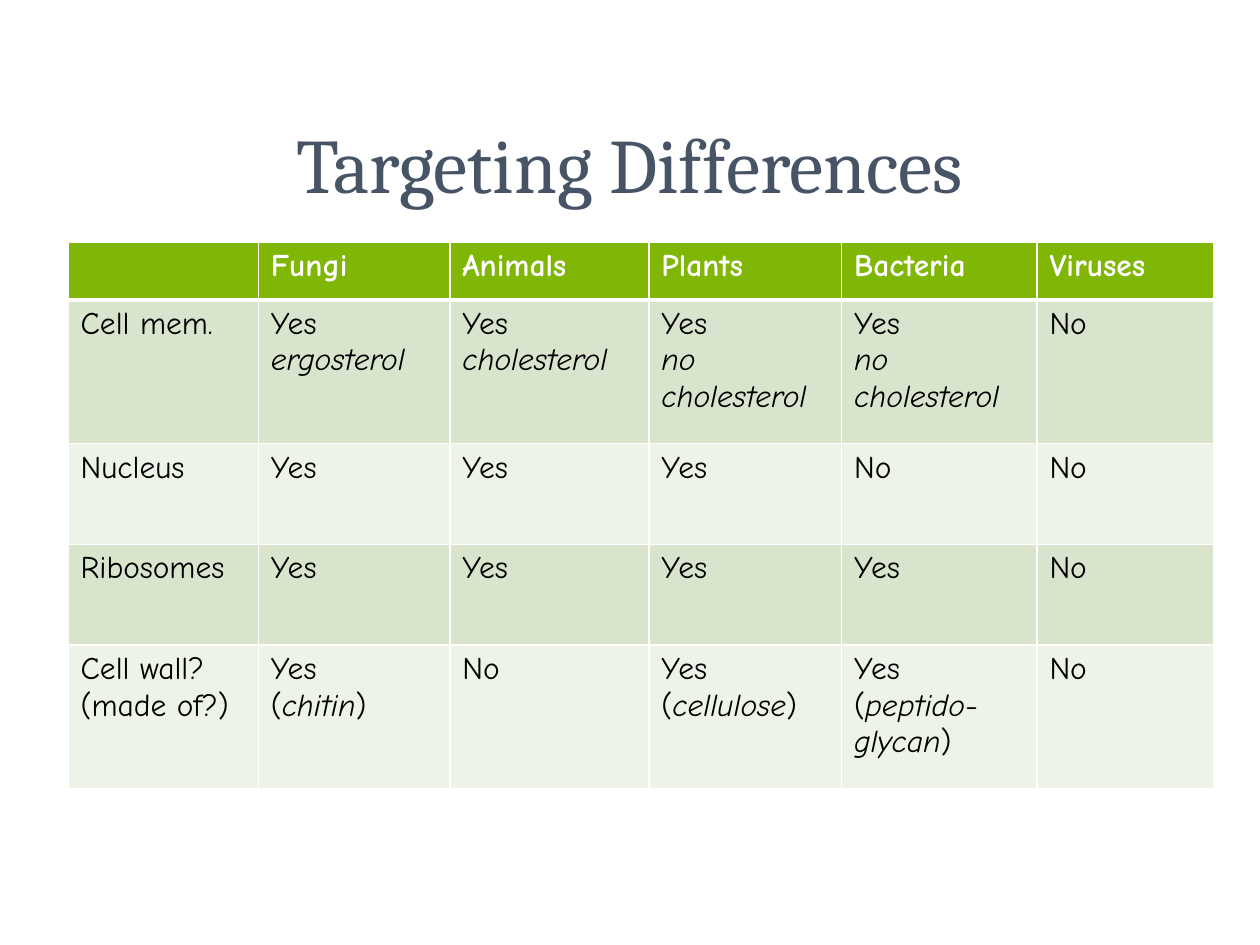
from lxml.etree import SubElement
from pptx import Presentation
from pptx.dml.color import RGBColor
from pptx.enum.text import MSO_ANCHOR, PP_ALIGN
from pptx.oxml.ns import qn
from pptx.util import Inches, Pt

SLATE = RGBColor(0x46, 0x54, 0x66)
GREEN = RGBColor(0x80, 0xB6, 0x06)
BAND_DARK = RGBColor(0xD8, 0xE5, 0xCC)
BAND_LIGHT = RGBColor(0xED, 0xF3, 0xE7)
WHITE = RGBColor(0xFF, 0xFF, 0xFF)
BLACK = RGBColor(0x00, 0x00, 0x00)

COLUMN_WIDTHS = [1.51, 1.52, 1.58, 1.53, 1.55, 1.4]
ROW_HEIGHTS = [0.46, 1.14, 0.8, 0.8, 1.14]

# A line break starts a new paragraph; text between asterisks is italic
COMPARISON = [
    ["", "Fungi", "Animals", "Plants", "Bacteria", "Viruses"],
    ["Cell mem.", "Yes\n*ergosterol*", "Yes\n*cholesterol*",
     "Yes\n*no cholesterol*", "Yes\n*no cholesterol*", "No"],
    ["Nucleus", "Yes", "Yes", "Yes", "No", "No"],
    ["Ribosomes", "Yes", "Yes", "Yes", "Yes", "No"],
    ["Cell wall?\n(made of?)", "Yes\n(*chitin*)", "No",
     "Yes\n(*cellulose*)", "Yes\n(*peptido-glycan*)", "No"],
]


def add_run(paragraph, text, font_name, size, color, bold=False, italic=False):
    run = paragraph.add_run()
    run.text = text
    font = run.font
    font.name, font.size = font_name, Pt(size)
    font.bold, font.italic = bold, italic
    font.color.rgb = color


def add_title(slide, text):
    title = slide.shapes.title
    title.left, title.top = Inches(0.75), Inches(0.67)
    title.width, title.height = Inches(8.5), Inches(1.25)
    title.text_frame.vertical_anchor = MSO_ANCHOR.MIDDLE
    paragraph = title.text_frame.paragraphs[0]
    paragraph.alignment = PP_ALIGN.CENTER
    add_run(paragraph, text, "Cambria", 44, SLATE)


def set_borders(cell, top, bottom):
    properties = cell._tc.get_or_add_tcPr()
    for side, points in (("L", 1), ("R", 1), ("T", top), ("B", bottom)):
        line = SubElement(properties, qn(f"a:ln{side}"), w=str(Pt(points)))
        fill = SubElement(line, qn("a:solidFill"))
        SubElement(fill, qn("a:srgbClr"), val=str(WHITE))


def write_cell(cell, content, is_header):
    frame = cell.text_frame
    for number, line in enumerate(content.split("\n")):
        paragraph = frame.add_paragraph() if number else frame.paragraphs[0]
        for index, part in enumerate(line.split("*")):
            if part:
                add_run(paragraph, part, "Comic Neue", 18,
                        WHITE if is_header else BLACK,
                        bold=is_header, italic=index % 2 == 1)


def add_comparison(slide):
    table = slide.shapes.add_table(
        len(ROW_HEIGHTS), len(COLUMN_WIDTHS), Inches(0.54), Inches(1.92),
        Inches(sum(COLUMN_WIDTHS)), Inches(sum(ROW_HEIGHTS))).table
    for column, width in zip(table.columns, COLUMN_WIDTHS):
        column.width = Inches(width)
    for r, (row, height) in enumerate(zip(table.rows, ROW_HEIGHTS)):
        row.height = Inches(height)
        band = GREEN if r == 0 else BAND_DARK if r % 2 else BAND_LIGHT
        for cell, content in zip(row.cells, COMPARISON[r]):
            # The rule under the header is heavier than the others
            set_borders(cell, top=3 if r == 1 else 1, bottom=3 if r == 0 else 1)
            cell.fill.solid()
            cell.fill.fore_color.rgb = band
            write_cell(cell, content, is_header=r == 0)


def main():
    presentation = Presentation()
    presentation.slide_width = Inches(10)
    presentation.slide_height = Inches(7.5)
    slide = presentation.slides.add_slide(presentation.slide_layouts[5])
    add_title(slide, "Targeting Differences")
    add_comparison(slide)
    presentation.save("out.pptx")


if __name__ == "__main__":
    main()
